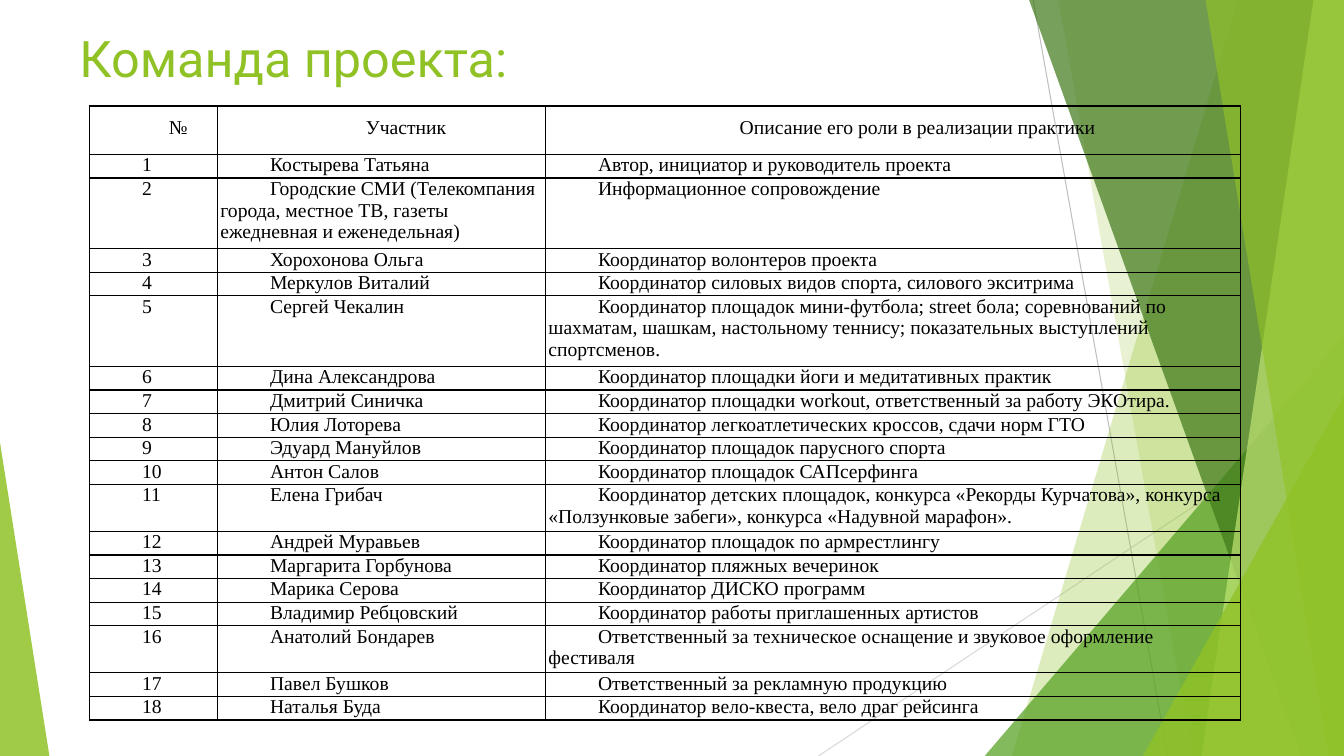
import pptx
import pptx.util
import pptx.dml.color
import pptx.enum.shapes
import pptx.enum.text
import pptx.oxml
import pptx.oxml.ns

TITLE = "Команда проекта:"
HEAD = ("№", "Участник", "Описание его роли в реализации практики")
TEAM = [
    ("Костырева Татьяна", "Автор, инициатор и руководитель проекта"),
    ("Городские СМИ (Телекомпания города, местное ТВ, газеты ежедневная и еженедельная)",
     "Информационное сопровождение"),
    ("Хорохонова Ольга", "Координатор волонтеров проекта"),
    ("Меркулов Виталий", "Координатор силовых видов спорта, силового экситрима"),
    ("Сергей Чекалин",
     "Координатор площадок мини-футбола; street бола; соревнований по шахматам, шашкам, "
     "настольному теннису; показательных выступлений спортсменов."),
    ("Дина Александрова", "Координатор площадки йоги и медитативных практик"),
    ("Дмитрий Синичка", "Координатор площадки workout, ответственный за работу ЭКОтира."),
    ("Юлия Лоторева", "Координатор легкоатлетических кроссов, сдачи норм ГТО"),
    ("Эдуард Мануйлов", "Координатор площадок парусного спорта"),
    ("Антон Салов", "Координатор площадок САПсерфинга"),
    ("Елена Грибач",
     "Координатор детских площадок, конкурса «Рекорды Курчатова», "
     "конкурса «Ползунковые забеги», конкурса «Надувной марафон»."),
    ("Андрей Муравьев", "Координатор площадок по армрестлингу"),
    ("Маргарита Горбунова", "Координатор пляжных вечеринок"),
    ("Марика Серова", "Координатор ДИСКО программ"),
    ("Владимир Ребцовский", "Координатор работы приглашенных артистов"),
    ("Анатолий Бондарев",
     "Ответственный за техническое оснащение и звуковое оформление фестиваля"),
    ("Павел Бушков", "Ответственный за рекламную продукцию"),
    ("Наталья Буда", "Координатор вело-квеста, вело драг рейсинга"),
]
COLORS = {"lime": "90C226", "green": "54A021", "dark": "3F7819", "pale": "C0E474",
          "gray": "BFBFBF", "light": "D9D9D9", "black": "000000"}
WIDE, HIGH = 960, 540
RAYS = [("gray", (738, 0, 834, HIGH)), ("light", (WIDE, 290.2, 584.6, HIGH))]
DECOR = [
    ("band", (884.2, 722.9), "lime", 30),
    ("band", (756, 851.8), "lime", 20),
    ("peak", (703.4, 239.8, 256.6, 1), "green", 72),
    ("band", (735.1, 929.5), "dark", 70),
    ("band", (938.2, 858.2), "pale", 70),
    ("band", (861.1, 949), "lime", 65),
    ("peak", (816.5, 283, 143.5, 1), "lime", 80),
    ("peak", (0, 316.1, 35.3, 0), "lime", 85),
]
COLS = (91.4, 234.3, 496.5)
ROW = 16.65
TALL = {0: 34.6, 2: 49.7, 5: 33.3, 11: 33.3}

Pt = pptx.util.Pt
ALIGN = pptx.enum.text.PP_ALIGN


def tint(name):
    return pptx.dml.color.RGBColor.from_string(COLORS[name])


def apply(item, form):
    for key, val in form.items():
        setattr(item, key, val)


def node(text):
    return pptx.oxml.parse_xml(text.replace(">", " " + pptx.oxml.ns.nsdecls("a") + ">", 1)
                               if "/>" not in text[:text.index(">") + 1]
                               else text.replace("/>", " " + pptx.oxml.ns.nsdecls("a") + "/>", 1))


def draw_ray(shapes, name, ends):
    kind = pptx.enum.shapes.MSO_CONNECTOR.STRAIGHT
    ray = shapes.add_connector(kind, *map(Pt, ends))
    ray.line.color.rgb = tint(name)
    ray.line.width = Pt(0.75)
    ray._element.spPr.append(node("<a:effectLst/>"))


def draw_decor(shapes, kind, dims, name, alpha):
    if kind == "band":
        top, foot = dims
        path = shapes.build_freeform(Pt(top), 0)
        path.add_line_segments([(Pt(WIDE), 0), (Pt(WIDE), Pt(HIGH)), (Pt(foot), Pt(HIGH))])
        shape = path.convert_to_shape()
    else:
        left, top, wide, tip = dims
        shape = shapes.add_shape(pptx.enum.shapes.MSO_SHAPE.ISOSCELES_TRIANGLE,
                                 Pt(left), Pt(top), Pt(wide), Pt(HIGH - top))
        shape.adjustments[0] = tip
    shape.shadow.inherit = False
    shape.line.fill.background()
    shape.fill.solid()
    shape.fill.fore_color.rgb = tint(name)
    color = shape._element.spPr.find(".//" + pptx.oxml.ns.qn("a:srgbClr"))
    color.append(node(f'<a:alpha val="{alpha * 1000}"/>'))


def write(par, text, face, size, name):
    run = par.add_run()
    run.text = text
    apply(run.font, {"name": face, "size": Pt(size), "bold": False})
    run.font.color.rgb = tint(name)


def fill_cell(cell, text, form):
    apply(cell, {"margin_left": Pt(2.2), "margin_right": Pt(2.2),
                 "margin_top": 0, "margin_bottom": 0})
    cell.fill.background()
    props = cell._tc.get_or_add_tcPr()
    for spot, side in enumerate("LRTB"):
        props.insert(spot, node(
            f'<a:ln{side} w="{Pt(1)}"><a:solidFill><a:srgbClr val="{COLORS["black"]}"/>'
            f'</a:solidFill></a:ln{side}>'))
    par = cell.text_frame.paragraphs[0]
    apply(par, form)
    par._p.get_or_add_pPr().set("indent", str(Pt(35.4)))
    write(par, text, "Times New Roman", 14, "black")


def draw_table(shapes):
    rows = [HEAD] + [(str(num), *who) for num, who in enumerate(TEAM, 1)]
    highs = [TALL.get(spot, ROW) for spot in range(len(rows))]
    table = shapes.add_table(len(rows), len(COLS), Pt(63.9), Pt(75.7),
                             Pt(sum(COLS)), Pt(sum(highs))).table
    apply(table, {"first_row": False, "horz_banding": False})
    for col, wide in zip(table.columns, COLS):
        col.width = Pt(wide)
    for spot, (row, high) in enumerate(zip(table.rows, highs)):
        row.height = Pt(high)
        form = {"alignment": ALIGN.LEFT} if spot else {
            "alignment": ALIGN.CENTER, "line_spacing": 1.5}
        for cell, text in zip(row.cells, rows[spot]):
            fill_cell(cell, text, form)


def main():
    deck = pptx.Presentation()
    apply(deck, {"slide_width": Pt(WIDE), "slide_height": Pt(HIGH)})
    shapes = deck.slides.add_slide(deck.slide_layouts[6]).shapes
    for ray in RAYS:
        draw_ray(shapes, *ray)
    for part in DECOR:
        draw_decor(shapes, *part)
    frame = shapes.add_textbox(Pt(49.7), Pt(15.8), Pt(676.8), Pt(103.7)).text_frame
    frame.word_wrap = True
    write(frame.paragraphs[0], TITLE, "Roboto", 36, "lime")
    draw_table(shapes)
    deck.save("out.pptx")


if __name__ == "__main__":
    main()
